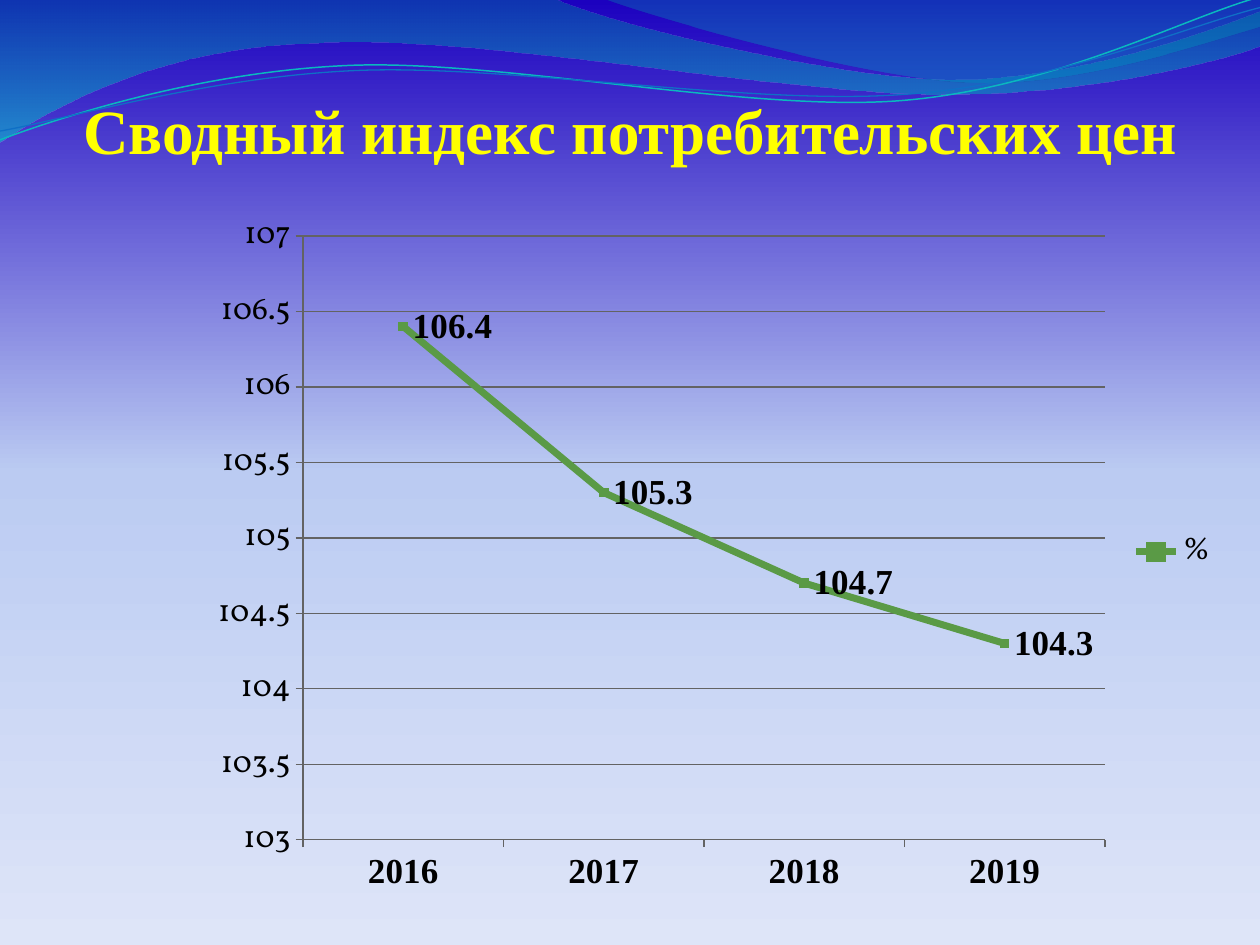
from math import cos, radians, sin

from lxml.etree import SubElement
from pptx import Presentation
from pptx.chart.data import CategoryChartData
from pptx.dml.color import RGBColor
from pptx.enum.chart import (XL_CHART_TYPE as ChartType, XL_LABEL_POSITION as LabelPosition,
                             XL_LEGEND_POSITION as LegendPosition, XL_MARKER_STYLE as MarkerStyle,
                             XL_TICK_MARK as TickMark)
from pptx.enum.text import MSO_ANCHOR as Anchor, PP_ALIGN as Align
from pptx.oxml.ns import qn
from pptx.util import Pt

TITLE = "Сводный индекс потребительских цен"
YEARS = ["2016", "2017", "2018", "2019"]
SERIES_NAME = "%"
INDEX = [106.4, 105.3, 104.7, 104.3]
SERIF, BODY = "Times New Roman", "Vollkorn"
BLACK, YELLOW, GREEN, GRAY = "000000", "FFFF00", "5A9A46", "636363"

TITLE_BOX = (16.8, 21.4, 686.8, 74)
CHART_BOX = (113, 113.8, 590.4, 403.2)
PLOT_BOX = (173.2, 134.9, 458.2, 345)

SKY = [(0, "1C01BF", 100), (50, "BBCBF2", 100), (100, "DEE5F8", 100)]
WAVES = [
    ((-0.7, -0.7, 721.4, 82.1),
     [(0, 0), (316.8, -0.7), (342.7, 12.2, 478.1, 45.4, 545.8, 45.4),
      (614.2, 45.4, 689.8, 18.7, 720, 6.5), (720.7, 25.9),
      (707.8, 31.7, 626.4, 54.7, 537.1, 54), (447.8, 54, 275, 20.2, 185, 24.5),
      (92.9, 25.9, 33.1, 59.8, -0.7, 81.4), (0, 0)],
     [(0, "0074A1", 45), (100, "00C6CF", 55)]),
    ((344.9, -0.7, 375.1, 50.4),
     [(344.9, -0.7), (366.5, 7.9, 491, 44.6, 553.7, 46.8),
      (616.3, 49.7, 691.9, 23, 720, 15.1), (720, 0), (344.9, -0.7)],
     [(0, "00A1A9", 30), (80, "008BBF", 45)]),
]
STRAND_TILT = -2.7
STRANDS = [
    ((-1.4, 15.8, 721.4, 51.1),
     [(0, 79.9), (34.6, 67, 113.8, 41, 199.4, 37.4), (284.4, 33.8, 427, 64.1, 513.4, 57.6),
      (599.8, 51.1, 675.4, 10.8, 718.6, -1.4)], "0AB8BF", 0.85),
    ((-1.4, 21.6, 722.2, 41.8),
     [(0, 74.9), (33.8, 69.1, 118.1, 43.9, 203.8, 40.3), (290.2, 36.7, 429.8, 60.5, 516.2, 54),
      (601.9, 48.2, 677.5, 15.1, 720, 4.3)], "0F6FC6", 0.75),
]


def color(value):
    return RGBColor.from_string(value)


def set_gradient(fill, owner, stops):
    fill.gradient()
    fill.gradient_angle = 270
    stop_list = owner.find(".//" + qn("a:gsLst"))
    for old in list(stop_list):
        stop_list.remove(old)
    for position, value, opacity in stops:
        stop = SubElement(stop_list, qn("a:gs"), pos=str(position * 1000))
        tint = SubElement(stop, qn("a:srgbClr"), val=value)
        if opacity < 100:
            SubElement(tint, qn("a:alpha"), val=str(opacity * 1000))


def add_curve(page, box, segments, tilt=0, close=False):
    left, top, width, height = box
    angle = radians(-tilt)

    def local(x, y):
        dx, dy = x - left - width / 2, y - top - height / 2
        return (Pt(width / 2 + dx * cos(angle) - dy * sin(angle)),
                Pt(height / 2 + dx * sin(angle) + dy * cos(angle)))

    builder = page.shapes.build_freeform(Pt(left), Pt(top))
    builder.add_line_segments([(Pt(left + width), Pt(top + height))], close=False)
    shape = builder.convert_to_shape()
    shape.shadow.inherit = False
    shape.rotation = tilt
    outline = shape.element.find(".//" + qn("a:path"))
    for old in list(outline):
        outline.remove(old)
    for index, segment in enumerate(segments):
        tag = "moveTo" if index == 0 else "lnTo" if len(segment) == 2 else "cubicBezTo"
        command = SubElement(outline, qn(f"a:{tag}"))
        for x, y in zip(segment[::2], segment[1::2]):
            px, py = local(x, y)
            SubElement(command, qn("a:pt"), x=str(int(px)), y=str(int(py)))
    if close:
        SubElement(outline, qn("a:close"))
    return shape


def style_font(font, size, name, value=BLACK, bold=False):
    font.size, font.name, font.bold = Pt(size), name, bold
    font.color.rgb = color(value)


def style_line(line, value, width):
    line.color.rgb = color(value)
    line.width = Pt(width)


def add_title(page):
    box = page.shapes.add_textbox(*map(Pt, TITLE_BOX))
    frame = box.text_frame
    frame.word_wrap = True
    frame.vertical_anchor = Anchor.BOTTOM
    frame.margin_left = frame.margin_right = frame.margin_bottom = 0
    frame.margin_top = Pt(3.6)
    frame.text = TITLE
    para = frame.paragraphs[0]
    para.alignment = Align.CENTER
    style_font(para.runs[0].font, 36, SERIF, YELLOW, True)


def place_plot(chart):
    left, top, width, height = CHART_BOX
    x, y, w, h = PLOT_BOX
    shares = {"x": (x - left) / width, "y": (y - top) / height, "w": w / width, "h": h / height}
    area = chart.element.find(".//" + qn("c:plotArea"))
    layout = area.find(qn("c:layout"))
    if layout is None:
        layout = SubElement(area, qn("c:layout"))
        area.insert(0, layout)
    manual = SubElement(layout, qn("c:manualLayout"))
    SubElement(manual, qn("c:layoutTarget"), val="inner")
    for side in "xy":
        SubElement(manual, qn(f"c:{side}Mode"), val="edge")
    for side, share in shares.items():
        SubElement(manual, qn(f"c:{side}"), val=str(share))


def add_index_chart(page):
    data = CategoryChartData()
    data.categories = YEARS
    data.add_series(SERIES_NAME, INDEX)
    chart = page.shapes.add_chart(ChartType.LINE_MARKERS_STACKED, *map(Pt, CHART_BOX), data).chart
    chart.has_title = False
    style_font(chart.font, 18, BODY)
    chart.has_legend = True
    chart.legend.position = LegendPosition.RIGHT
    chart.legend.include_in_layout = False

    years, values = chart.category_axis, chart.value_axis
    for axis in (years, values):
        axis.major_tick_mark = TickMark.OUTSIDE
        axis.minor_tick_mark = TickMark.NONE
        style_line(axis.format.line, GRAY, 0.75)
    style_font(years.tick_labels.font, 20, SERIF, bold=True)
    values.minimum_scale, values.maximum_scale, values.major_unit = 103, 107, 0.5
    values.has_major_gridlines = True
    style_line(values.major_gridlines.format.line, GRAY, 0.75)

    plot = chart.plots[0]
    plot.vary_by_categories = False
    series = plot.series[0]
    series.smooth = False
    style_line(series.format.line, GREEN, 4)
    marker = series.marker
    marker.style, marker.size = MarkerStyle.SQUARE, 5
    marker.format.fill.solid()
    marker.format.fill.fore_color.rgb = color(GREEN)
    style_line(marker.format.line, GREEN, 0.75)
    labels = series.data_labels
    labels.show_value = True
    labels.position = LabelPosition.RIGHT
    style_font(labels.font, 20, SERIF, bold=True)
    place_plot(chart)


def main():
    deck = Presentation()
    deck.slide_width, deck.slide_height = Pt(720), Pt(540)
    page = deck.slides.add_slide(deck.slide_layouts[6])
    set_gradient(page.background.fill, page.element, SKY)
    for box, segments, stops in WAVES:
        wave = add_curve(page, box, segments, close=True)
        set_gradient(wave.fill, wave.element, stops)
        wave.line.fill.background()
    for box, segments, value, width in STRANDS:
        strand = add_curve(page, box, segments, tilt=STRAND_TILT)
        strand.fill.background()
        style_line(strand.line, value, width)
    add_title(page)
    add_index_chart(page)
    deck.save("out.pptx")


if __name__ == "__main__":
    main()
